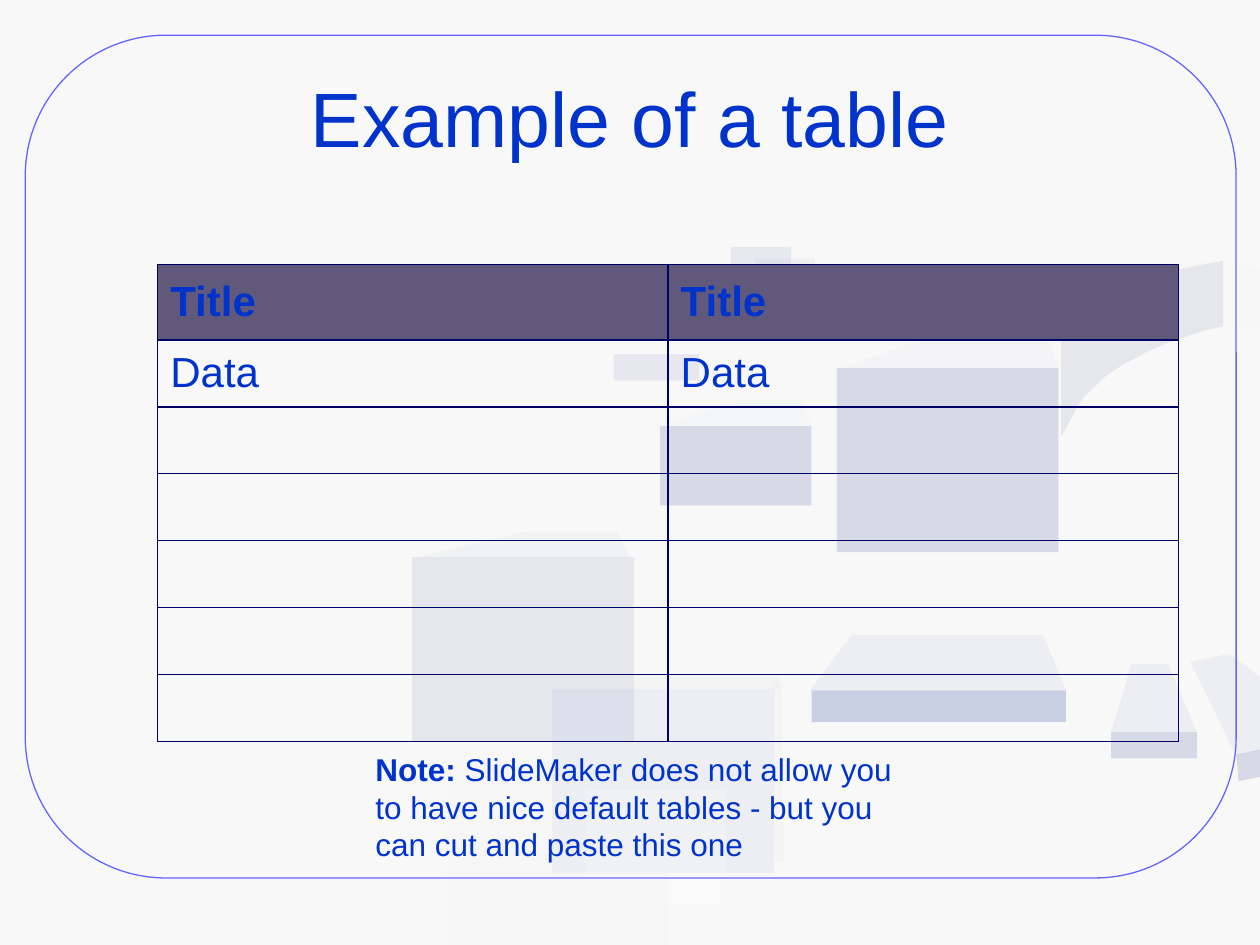
from dataclasses import dataclass

from lxml.etree import SubElement
from pptx import Presentation
from pptx.dml.color import RGBColor as RGB
from pptx.enum.shapes import MSO_SHAPE as SHAPE
from pptx.enum.text import MSO_ANCHOR as ANCHOR, PP_ALIGN as ALIGN
from pptx.oxml.ns import qn
from pptx.util import Cm, Pt


@dataclass(frozen=True)
class Theme:
    font: str = "Arial"
    background: str = "F8F8F8"
    text: str = "0033CC"
    frame: str = "6666FF"
    header: str = "60597B"
    border: str = "000066"
    title_size: int = 44
    table_size: int = 24
    note_size: int = 18
    violet: str = "5960A5"
    slate: str = "99A3C1"
    mist: str = "BFC7E2"
    pale: str = "EFF0F4"
    ice: str = "E6E9F4"
    haze: str = "E5E8EA"
    alpha: int = 20


theme = Theme()


def style_run(r, size, bold=False):
    r.font.name, r.font.size, r.font.bold = theme.font, Pt(size), bold
    r.font.color.rgb = RGB.from_string(theme.text)


def add_tint(s, color, geometry):
    """A list of points gives a polygon, a tuple gives a rectangle."""
    if isinstance(geometry, list):
        points = [(Cm(x), Cm(y)) for x, y in geometry]
        builder = s.shapes.build_freeform(*points[0], scale=1.0)
        builder.add_line_segments(points[1:], close=True)
        sp = builder.convert_to_shape()
    else:
        sp = s.shapes.add_shape(SHAPE.RECTANGLE, *map(Cm, geometry))
    sp.shadow.inherit = False
    sp.line.fill.background()
    sp.fill.solid()
    sp.fill.fore_color.rgb = RGB.from_string(color)
    rgb = sp.element.spPr.find(qn("a:solidFill")).find(qn("a:srgbClr"))
    SubElement(rgb, qn("a:alpha"), val=str(theme.alpha * 1000))


prs = Presentation()
prs.slide_width, prs.slide_height = Cm(25.4), Cm(19.05)
s = prs.slides.add_slide(prs.slide_layouts[5])
s.background.fill.solid()
s.background.fill.fore_color.rgb = RGB.from_string(theme.background)

# Background blocks and arches, from back to front
cube = (4.47, 3.71)
bar = (1.22, 0.38)
foot = (1.73, 0.53)
tints = [
    (theme.violet, (16.87, 7.42, *cube)),
    ("E4E5EF", [(21.34, 7.42), (16.94, 7.42), (19.18, 6.65), (21.06, 6.65)]),
    (theme.ice, [
        (19.35, 6.27), (21.11, 6.27), (21.36, 6.15), (21.84, 5.94),
        (22.33, 5.77), (22.86, 5.61), (23.52, 5.44), (24.26, 5.31),
        (24.66, 5.26), (23.27, 5.41), (22.4, 5.51), (21.49, 5.66),
        (20.62, 5.83), (20.07, 5.97), (19.74, 6.1)]),
    (theme.slate, [
        (24.66, 5.26), (24.66, 6.58), (24.33, 6.65), (23.98, 6.76),
        (23.55, 6.91), (23.09, 7.11), (22.61, 7.37), (22.28, 7.59),
        (21.99, 7.87), (21.81, 8.05), (21.39, 8.81), (21.39, 6.27),
        (21.46, 6.17), (21.64, 6.07), (21.87, 5.97), (22.28, 5.82),
        (22.86, 5.64), (23.62, 5.46), (24.1, 5.36)]),
    ("DCDDE5", (16.28, 5.79, 0.89, 0.28)),
    ("D0D2E2", (15.21, 5.21, *bar)),
    ("A7ADD6", (14.73, 4.98, *bar)),
    ("A3A8CE", (12.37, 7.14, *foot)),
    (theme.violet, (13.31, 8.59, 3.05, 1.6)),
    (theme.ice, [(16.36, 8.59), (13.26, 8.59), (14.83, 8.08), (16.15, 8.08)]),
    (theme.pale, [
        (27.36, 10.77), (27.58, 10.08), (27.71, 9.58), (27.81, 8.81),
        (27.81, 8.41), (27.71, 8), (27.58, 7.65), (27.36, 7.32),
        (27.03, 7.04), (26.62, 6.81), (26.06, 6.65), (25.58, 6.6),
        (24.99, 6.58), (24.99, 5.31), (25.37, 5.44), (25.91, 5.69),
        (26.39, 5.99), (26.85, 6.4), (27.28, 6.91), (27.56, 7.44),
        (27.76, 8.08), (27.81, 8.79), (27.71, 9.63), (27.51, 10.36)]),
    ("0D2E8C", (16.36, 13.92, 5.13, 0.64)),
    (theme.mist, [(21.49, 13.92), (16.33, 13.92), (17.17, 12.8), (21.03, 12.8)]),
    (theme.violet, (22.4, 14.76, *foot)),
    (theme.mist, [(24.13, 14.76), (22.4, 14.76), (22.81, 13.39), (23.55, 13.39)]),
    (theme.violet, [(24.92, 15.21), (26.92, 14.81), (26.95, 15.34), (24.97, 15.75)]),
    (theme.mist, [(26.92, 14.81), (24.92, 15.24), (24, 13.34), (24.79, 13.18)]),
    (theme.slate, (8.31, 11.23, *cube)),
    (theme.mist, (11.13, 13.89, *cube)),
    (theme.pale, (9.02, 15.34, *cube)),
    ("FFFFFF", (11.79, 15.93, 2.84, 2.36)),
    ("D7DAE0", [(12.7, 11.23), (8.43, 11.23), (10.59, 10.72), (12.45, 10.72)]),
    (theme.haze, (11.43, 13.61, 4.29, 0.28)),
    (theme.haze, [(15.62, 17.37), (15.57, 13.74), (15.75, 13.74), (15.8, 17.37)]),
]
for color, geometry in tints:
    add_tint(s, color, geometry)

# Rounded frame
frame = s.shapes.add_shape(SHAPE.ROUNDED_RECTANGLE, Cm(0.51), Cm(0.71), Cm(24.41), Cm(16.99))
frame.adjustments[0] = 0.167
frame.shadow.inherit = False
frame.fill.background()
frame.line.color.rgb = RGB.from_string(theme.frame)
frame.line.width = Pt(0.75)

# Title, brought in front of the frame
title = s.shapes.title
title.left, title.top, title.width, title.height = Cm(1.27), Cm(0.76), Cm(22.86), Cm(3.18)
tf = title.text_frame
tf.text = "Example of a table"
tf.vertical_anchor = ANCHOR.MIDDLE
tf.paragraphs[0].alignment = ALIGN.CENTER
style_run(tf.paragraphs[0].runs[0], theme.title_size)
frame.element.addnext(title.element)

# Table
rows = [("Title", "Title"), ("Data", "Data")] + [("", "")] * 5
table = s.shapes.add_table(len(rows), 2, Cm(3.18), Cm(5.33), Cm(20.57), Cm(9.62)).table
table.first_row = table.horz_banding = False
for column in table.columns:
    column.width = Cm(10.29)
for i, texts in enumerate(rows):
    table.rows[i].height = Cm(1.35 if i else 1.52)
    for j, text in enumerate(texts):
        cell = table.cell(i, j)
        cell.vertical_anchor = ANCHOR.MIDDLE
        cell.text = text
        for r in cell.text_frame.paragraphs[0].runs:
            style_run(r, theme.table_size, bold=i == 0)
        tcPr = cell._tc.get_or_add_tcPr()
        for side in ("a:lnL", "a:lnR", "a:lnT", "a:lnB"):
            ln = SubElement(tcPr, qn(side), w=str(Pt(1)))
            SubElement(SubElement(ln, qn("a:solidFill")), qn("a:srgbClr"), val=theme.border)
        if i == 0:
            cell.fill.solid()
            cell.fill.fore_color.rgb = RGB.from_string(theme.header)
        else:
            cell.fill.background()

# Note
tf = s.shapes.add_textbox(Cm(7.32), Cm(14.99), Cm(11.4), Cm(2.54)).text_frame
tf.word_wrap = True
p = tf.paragraphs[0]
for text, bold in (
    ("Note: ", True),
    ("SlideMaker does not allow you to have nice default tables - but you "
     "can cut and paste this one", False),
):
    r = p.add_run()
    r.text = text
    style_run(r, theme.note_size, bold)

prs.save("out.pptx")
